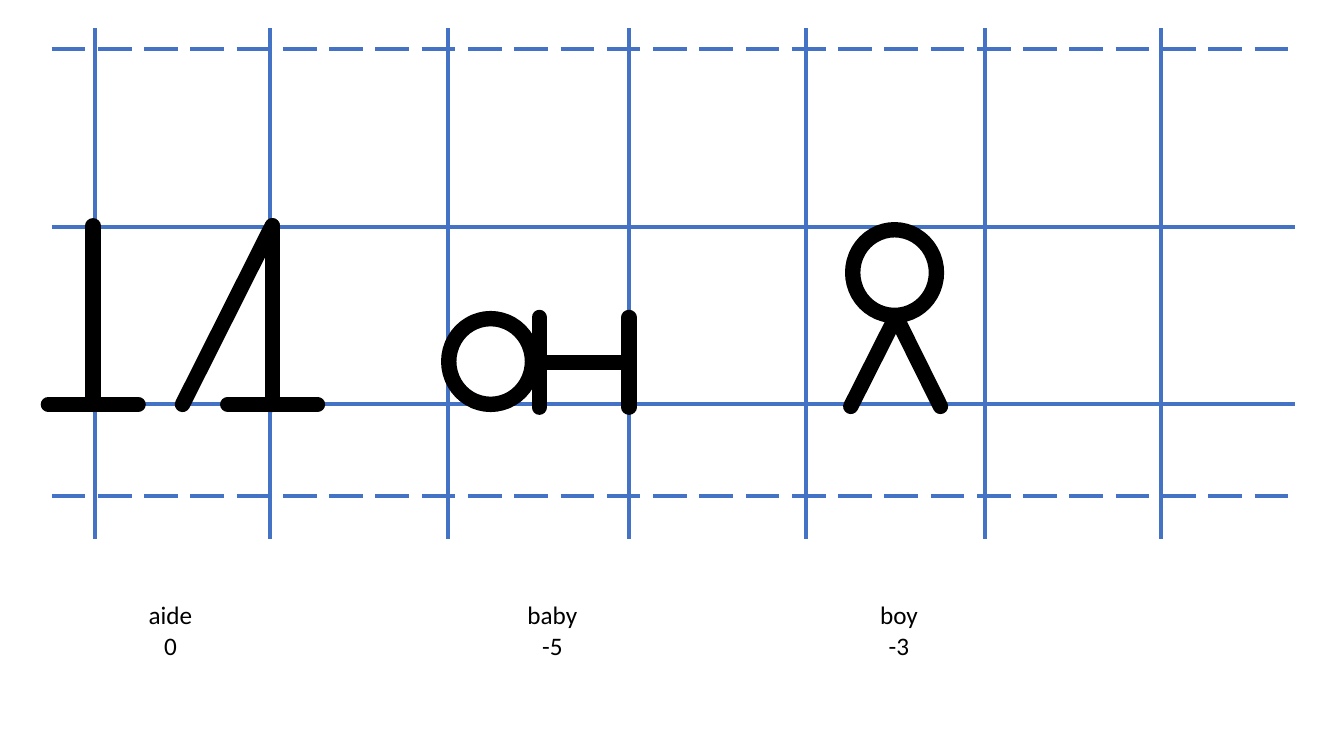
"""Build a slide of stick signs on a ruled grid with word labels."""
from lxml import etree
from pptx import Presentation
from pptx.dml.color import RGBColor
from pptx.enum.dml import MSO_LINE
from pptx.enum.shapes import MSO_CONNECTOR, MSO_SHAPE
from pptx.enum.text import MSO_AUTO_SIZE, PP_ALIGN
from pptx.oxml.ns import qn
from pptx.util import Cm, Pt

STRAIGHT = MSO_CONNECTOR.STRAIGHT
OVAL = MSO_SHAPE.OVAL
DASH = MSO_LINE.LONG_DASH
CENTER = PP_ALIGN.CENTER
GROW = MSO_AUTO_SIZE.SHAPE_TO_FIT_TEXT

COLORS = {"grid": "4472C4", "ink": "000000"}
FONT = "Calibri"

LEFT, RIGHT = 1.3, 32.64
TOP, BOTTOM = 0.71, 13.59
ROWS = [(5.72, False), (1.24, True), (10.19, False), (12.5, True)]
COLUMNS = [2.39, 6.81, 11.28, 15.85, 20.32, 24.82, 29.26]

LABELS = [
    ("aide", "0", 3.48, 1.63),
    ("baby", "-5", 13.03, 1.78),
    ("boy", "-3", 21.92, 1.47),
]

AIDE = [
    (2.34, 5.69, 2.34, 10.19),
    (1.22, 10.19, 3.48, 10.19),
    (6.86, 5.69, 4.6, 10.19),
    (6.86, 5.69, 6.86, 10.19),
    (5.74, 10.19, 8, 10.19),
]
BABY = [
    (13.59, 8, 13.59, 10.26),
    (13.59, 9.14, 15.85, 9.14),
    (15.85, 8, 15.85, 10.26),
]
BOY = [
    (21.44, 10.24, 22.58, 7.98),
    (22.58, 7.98, 23.7, 10.24),
]
SIGNS = [(AIDE, None), (BABY, (11.31, 8.03)), (BOY, (21.49, 5.79))]


def add_line(shapes, ends, color, width):
    """Draw a straight line without shadow and return it."""
    line = shapes.add_connector(STRAIGHT, *(Cm(n) for n in ends))
    line.line.color.rgb = RGBColor.from_string(COLORS[color])
    line.line.width = Pt(width)
    etree.SubElement(line.element.spPr, qn("a:effectLst"))
    return line


def add_grid(shapes):
    """Draw the ruled rows and columns."""
    for y, dashed in ROWS:
        row = add_line(shapes, (LEFT, y, RIGHT, y), "grid", 3)
        if dashed:
            row.line.dash_style = DASH
    for x in COLUMNS:
        add_line(shapes, (x, TOP, x, BOTTOM), "grid", 3)


def add_label(shapes, word, score, left, width):
    """Write a word with its score below."""
    box = shapes.add_textbox(Cm(left), Cm(14.99), Cm(width), Cm(1.8))
    frame = box.text_frame
    frame.word_wrap = False
    frame.auto_size = GROW
    frame.text = f"{word}\n{score}"
    for line in frame.paragraphs:
        line.alignment = CENTER
        line.font.name = FONT
        line.font.size = Pt(18)
        line.font.color.rgb = RGBColor.from_string(COLORS["ink"])


def add_ring(shapes, left, top):
    """Draw an open ring."""
    ring = shapes.add_shape(OVAL, Cm(left), Cm(top), Cm(2.11), Cm(2.16))
    ring.shadow.inherit = False
    ring.fill.background()
    ring.line.color.rgb = RGBColor.from_string(COLORS["ink"])
    ring.line.width = Pt(11)


def add_sign(shapes, strokes, ring):
    """Group the round-ended strokes and the ring of one sign."""
    group = shapes.add_group_shape()
    for ends in strokes:
        stroke = add_line(group.shapes, ends, "ink", 11)
        stroke.element.spPr.find(qn("a:ln")).set("cap", "rnd")
    if ring:
        add_ring(group.shapes, *ring)


def main():
    """Build and save the slide."""
    deck = Presentation()
    deck.slide_width, deck.slide_height = Cm(33.87), Cm(19.05)
    shapes = deck.slides.add_slide(deck.slide_layouts[6]).shapes
    add_grid(shapes)
    for label in LABELS:
        add_label(shapes, *label)
    for strokes, ring in SIGNS:
        add_sign(shapes, strokes, ring)
    deck.save("out.pptx")


if __name__ == "__main__":
    main()
